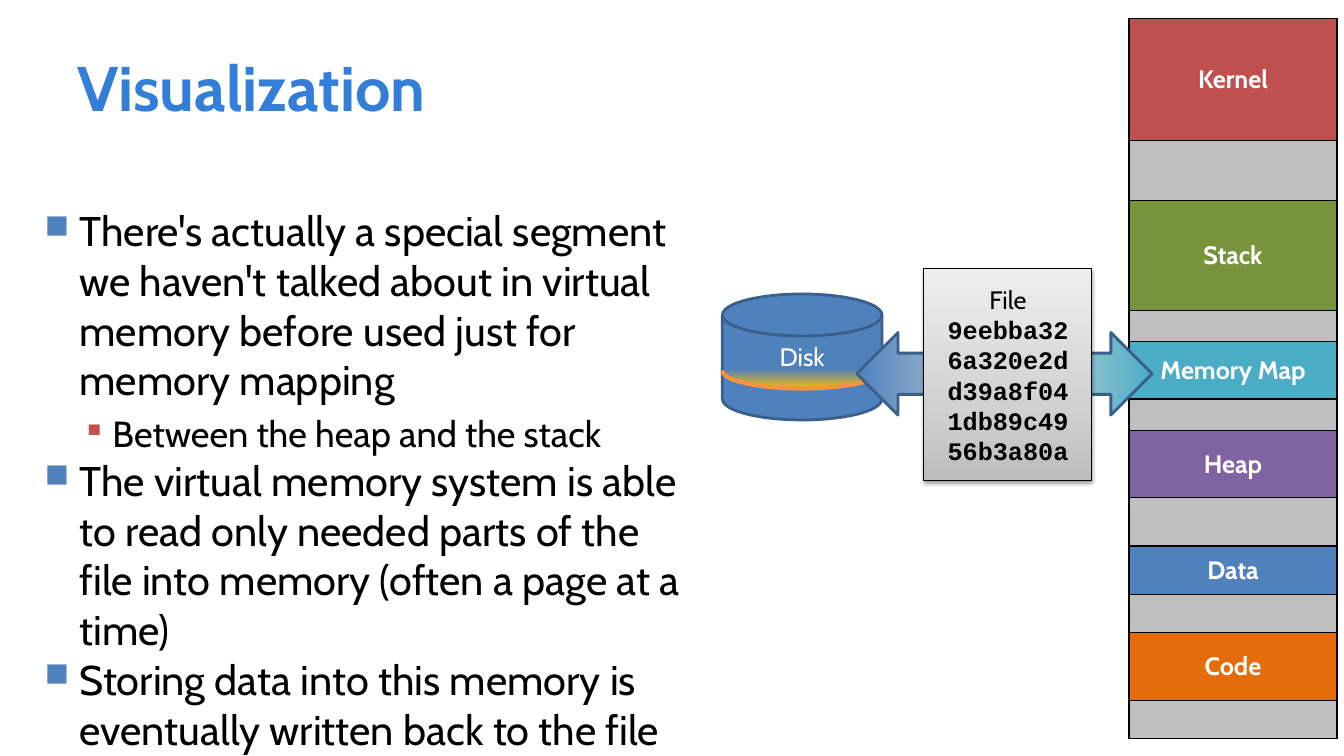
from lxml import etree
from pptx import Presentation
from pptx.dml.color import RGBColor
from pptx.enum.shapes import MSO_SHAPE as Preset
from pptx.enum.text import MSO_ANCHOR as Anchor, PP_ALIGN as Align
from pptx.oxml.ns import qn
from pptx.util import Pt

# Content
TITLE = "Visualization"
BULLETS = [
    (0, "There's actually a special segment we haven't talked about in virtual "
        "memory before used just for memory mapping"),
    (1, "Between the heap and the stack"),
    (0, "The virtual memory system is able to read only needed parts of the "
        "file into memory (often a page at a time)"),
    (0, "Storing data into this memory is eventually written back to the file"),
]
GAP = "BFBFBF"
SEGMENTS = [  # label, height, fill
    ("Kernel", 87.1, "C0504D"), ("", 43.2, GAP),
    ("Stack", 78.5, "77933C"), ("", 22.3, GAP),
    ("Memory Map", 41, "4BACC6"), ("", 22.3, GAP),
    ("Heap", 48.2, "8064A2"), ("", 34.5, GAP),
    ("Data", 34.5, "4F81BD"), ("", 27.4, GAP),
    ("Code", 48.2, "E46C0A"), ("", 27.4, GAP),
]
LEFT_SPANS = [(0, 6), (7, 11)]
FILE_LINES = ["File", "9eebba32", "6a320e2d", "d39a8f04", "1db89c49", "56b3a80a"]

# Formats
FONT, MONO = "Cabin", "Courier New"
LEVELS = [
    dict(size=29.6, left=34.5, hang=25, before=0, mark="■", color="4F81BD", percent=80),
    dict(size=25.9, left=58, hang=21.6, before=5.2, mark="▪", color="C0504D", percent=90),
]
OUTLINE = "3A5F8C"
COLUMN_WIDTH = 148.5


def rgb(value):
    return RGBColor.from_string(value)


def add_xml(parent, tag, **attributes):
    return etree.SubElement(parent, qn(tag), {k: str(v) for k, v in attributes.items()})


def write(paragraph, text, size=18, color="000000", align=Align.CENTER, **formats):
    paragraph.alignment = align
    run = paragraph.add_run()
    run.text = text
    for name, value in {"name": FONT, "size": Pt(size), **formats}.items():
        setattr(run.font, name, value)
    run.font.color.rgb = rgb(color)


def set_frame(frame, anchor, margins=(7.2, 3.6, 7.2, 3.6)):
    frame.word_wrap = True
    frame.vertical_anchor = anchor
    for side, value in zip(("left", "top", "right", "bottom"), margins):
        setattr(frame, f"margin_{side}", Pt(value))
    return frame


def add_text(box, anchor, margins):
    return set_frame(slide.shapes.add_textbox(*map(Pt, box)).text_frame, anchor, margins)


def add_shape(preset, box, line, width, fill=None):
    shape = slide.shapes.add_shape(preset, *map(Pt, box))
    shape.shadow.inherit = False
    shape.line.color.rgb = rgb(line)
    shape.line.width = Pt(width)
    if fill:
        shape.fill.solid()
        shape.fill.fore_color.rgb = rgb(fill)
    return shape


def set_gradient(shape, stops, angle):
    shape.fill.gradient()
    gradient = shape._element.spPr.find(qn("a:gradFill"))
    for child in list(gradient):
        gradient.remove(child)
    stop_list = add_xml(gradient, "a:gsLst")
    for position, color, opacity in stops:
        stop = add_xml(stop_list, "a:gs", pos=position * 1000)
        color_node = add_xml(stop, "a:srgbClr", val=color)
        if opacity < 100:
            add_xml(color_node, "a:alpha", val=opacity * 1000)
    add_xml(gradient, "a:lin", ang=angle * 60000, scaled=0)


def set_borders(cell, sides):
    properties = cell._tc.get_or_add_tcPr()
    for index, side in enumerate(sides):
        line = etree.Element(qn(f"a:ln{side}"), {"w": str(Pt(1))})
        add_xml(add_xml(line, "a:solidFill"), "a:srgbClr", val="000000")
        properties.insert(index, line)


presentation = Presentation()
presentation.slide_width, presentation.slide_height = Pt(960), Pt(540)
slide = presentation.slides.add_slide(presentation.slide_layouts[6])

# Memory layout table
total_height = sum(height for _, height, _ in SEGMENTS)
table = slide.shapes.add_table(len(SEGMENTS), 2, Pt(658), Pt(13), Pt(2 * COLUMN_WIDTH),
                               Pt(total_height)).table
table.first_row = table.horz_banding = False
for column in table.columns:
    column.width = Pt(COLUMN_WIDTH)
for row, (label, height, color) in enumerate(SEGMENTS):
    table.rows[row].height = Pt(height)
    left, segment = table.cell(row, 0), table.cell(row, 1)
    left.fill.background()
    segment.fill.solid()
    segment.fill.fore_color.rgb = rgb(color)
    set_borders(left, "R")
    set_borders(segment, "LRTB")
    for cell in (left, segment):
        cell.vertical_anchor = Anchor.MIDDLE
        cell.margin_left = cell.margin_right = cell.margin_top = cell.margin_bottom = 0
        cell.text_frame.paragraphs[0].font.size = Pt(8)
    if label:
        write(segment.text_frame.paragraphs[0], label, color="FFFFFF", bold=True)
for first, last in LEFT_SPANS:
    table.cell(first, 0).merge(table.cell(last, 0))

# Title
frame = add_text((48, 12.5, 864, 98.5), Anchor.MIDDLE, (7.2, 3.6, 3.6, 3.6))
write(frame.paragraphs[0], TITLE, 45, "337ED9", Align.LEFT, bold=True)

# Bullets
frame = add_text((18, 139.5, 480, 364.5), Anchor.TOP, (4.3, 7.2, 7.2, 3.6))
for index, (level, text) in enumerate(BULLETS):
    paragraph = frame.add_paragraph() if index else frame.paragraphs[0]
    style = LEVELS[level]
    paragraph.level = level
    paragraph.space_before = Pt(style["before"])
    write(paragraph, text, style["size"], align=Align.LEFT)
    properties = paragraph._p.get_or_add_pPr()
    properties.set("marL", str(Pt(style["left"])))
    properties.set("indent", str(-Pt(style["hang"])))
    add_xml(add_xml(properties, "a:buClr"), "a:srgbClr", val=style["color"])
    add_xml(properties, "a:buSzPct", val=style["percent"] * 1000)
    add_xml(properties, "a:buChar", char=style["mark"])

# Disk with its highlighted band
disk = add_shape(Preset.FLOWCHART_MAGNETIC_DISK, (516, 210, 114, 90), OUTLINE, 2, "4F81BD")
write(set_frame(disk.text_frame, Anchor.TOP).paragraphs[0], "Disk", color="FFFFFF")
band = add_shape(Preset.ARC, (516, 252, 114, 25.5), "F69240", 3)
band.adjustments[0], band.adjustments[1] = 107.747, 0
for flip in ("flipH", "flipV"):
    band._element.spPr.find(qn("a:xfrm")).set(flip, "1")
set_gradient(band, [(0, "FFC000", 100), (100, "FFC000", 0)], 90)

# Arrow between disk and memory map
arrow = add_shape(Preset.LEFT_RIGHT_ARROW, (612, 237.5, 211, 59), OUTLINE, 2)
set_gradient(arrow, [(0, "4F81BD", 100), (53, "D8D8D8", 100), (100, "4BACC6", 100)], 0)

# File
file_box = add_shape(Preset.RECTANGLE, (660, 192, 120, 151.5), "000000", 0.75)
set_gradient(file_box, [(0, "BDBDBD", 100), (35, "D1D1D1", 100), (100, "EEEEEE", 100)], 270)
shadow = add_xml(file_box._element.spPr.find(qn("a:effectLst")), "a:outerShdw",
                 blurRad=Pt(3.1), dist=Pt(1.6), dir=90 * 60000, rotWithShape=0)
add_xml(add_xml(shadow, "a:srgbClr", val="000000"), "a:alpha", val=38000)
frame = set_frame(file_box.text_frame, Anchor.MIDDLE)
for index, text in enumerate(FILE_LINES):
    paragraph = frame.add_paragraph() if index else frame.paragraphs[0]
    write(paragraph, text, name=MONO if index else FONT, bold=index > 0)

presentation.save("out.pptx")
